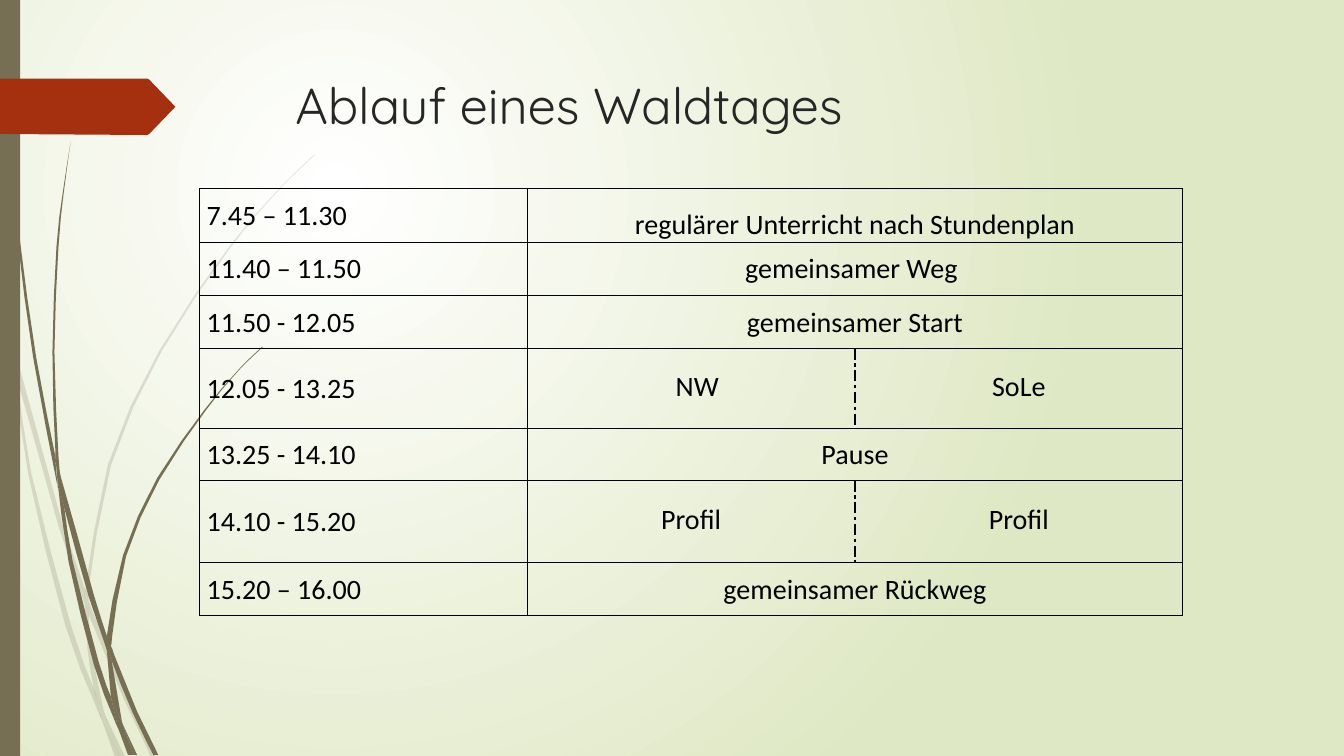
"""Build the slide with the timetable of a forest day."""
from lxml import etree
from pptx import Presentation
from pptx import util as u
from pptx.dml import color
from pptx.enum import shapes, text
from pptx.oxml import ns

PX = 9144
HUES = {"bark": "766F54", "rust": "A53010", "ink": "262626",
        "black": "000000", "white": "FFFFFF", "moss": "DFE8C4"}
MID, LOW = text.MSO_ANCHOR.MIDDLE, text.MSO_ANCHOR.BOTTOM
LEFT, MIDST = text.PP_ALIGN.LEFT, text.PP_ALIGN.CENTER

PALE = [
    ([(11, 350), (9, 322), (0, 282)], [(0, 299), (10, 344), (11, 350)]),
    ([(14, 345), (17, 376), (58, 522), (84, 599)], [(85, 586), (62, 520), (14, 345)]),
    ([(88, 596), (88, 610), (123, 694), (150, 751)], [(155, 751), (127, 692), (92, 607), (88, 596)]),
    ([(119, 751), (124, 751)], [(105, 711), (119, 751)]),
    ([(93, 683), (70, 619), (31, 469), (17, 376), (11, 350)],
     [(11, 350), (28, 470), (65, 621), (92, 693), (101, 714), (99, 707), (93, 683)]),
    ([(84, 599), (87, 646), (93, 683), (96, 692), (105, 711)],
     [(103, 706), (91, 646), (88, 610), (88, 608), (84, 599)]),
    ([(88, 584), (110, 462), (160, 349), (229, 245), (268, 198), (290, 175), (312, 154)],
     [(312, 153), (289, 175), (268, 197), (228, 244), (158, 348), (107, 461), (85, 584),
      (85, 586), (88, 596)]),
    ([(101, 714), (114, 751)], [(119, 751), (101, 714)]),
    ([(88, 608), (88, 610), (88, 596)], [(85, 586), (84, 599), (88, 608)]),
    ([(96, 692), (93, 683), (99, 707), (101, 714), (119, 751)], [(119, 751), (105, 711), (96, 692)]),
]
DARK = [
    ([(7, 110), (17, 233), (33, 355), (56, 477), (57, 481)],
     [(55, 457), (55, 453), (36, 355), (19, 232), (8, 109), (5, 48), (4, 0), (3, 0), (4, 48), (7, 110)]),
    ([(88, 592), (106, 645)], [(106, 633), (106, 631), (93, 590), (60, 472), (64, 505), (88, 592)]),
    ([(113, 649), (110, 641), (111, 656), (132, 708), (152, 749)], [(157, 749), (136, 706), (113, 649)]),
    ([(110, 691), (98, 657), (72, 556), (64, 505), (57, 477)],
     [(57, 477), (68, 557), (93, 659), (111, 708), (117, 722), (116, 717), (110, 691)]),
    ([(60, 472), (58, 453), (54, 349), (58, 245), (63, 193), (70, 141)],
     [(70, 141), (62, 193), (56, 245), (52, 349), (55, 449), (60, 472)]),
    ([(133, 749), (136, 749)], [(122, 719), (133, 749)]),
    ([(57, 477), (64, 505)], [(60, 472), (55, 449), (55, 453), (57, 477)]),
    ([(111, 633), (125, 552), (158, 476), (205, 406), (231, 374), (245, 359), (261, 344)],
     [(260, 344), (245, 358), (231, 373), (204, 405), (156, 474), (122, 551), (106, 631),
      (110, 641), (111, 633)]),
    ([(117, 722), (127, 749)], [(131, 749), (117, 722)]),
    ([(106, 645), (110, 691), (116, 706), (122, 719)],
     [(121, 716), (111, 656), (109, 651), (106, 645)]),
    ([(106, 645), (109, 651), (111, 656)], [(110, 641), (106, 631), (106, 633), (106, 645)]),
    ([(116, 706), (110, 691), (116, 717), (117, 722), (130, 749)], [(133, 749), (122, 719), (116, 706)]),
]
SIGN = [(0, 78), (146, 78), (148, 79), (174, 106), (148, 133), (146, 134), (0, 133)]
PLAN = [
    (53, "7.45 – 11.30", ["regulärer Unterricht nach Stundenplan"]),
    (53, "11.40 – 11.50", ["gemeinsamer Weg"]),
    (53, "11.50 - 12.05", ["gemeinsamer Start"]),
    (79, "12.05 - 13.25", ["NW", "SoLe"]),
    (52, "13.25 - 14.10", ["Pause"]),
    (81, "14.10 - 15.20", ["Profil", "Profil"]),
    (53, "15.20 – 16.00", ["gemeinsamer Rückweg"]),
]


def hue(name):
    """Return the named colour."""
    return color.RGBColor.from_string(HUES[name])


def tag(parent, name, **attrs):
    """Append a drawing element to its parent."""
    return etree.SubElement(parent, ns.qn(name), attrs)


def write(frame, words, size=20, font="Calibri", ink="black", align=LEFT):
    """Put formatted words into a text frame."""
    para = frame.paragraphs[0]
    para.alignment = align
    run = para.add_run()
    run.text = words
    run.font.size = u.Pt(size)
    run.font.name = font
    run.font.color.rgb = hue(ink)


def paint(shape, fill, alpha=100):
    """Give a shape a plain fill without line or shadow."""
    shape.shadow.inherit = False
    shape.line.fill.background()
    shape.fill.solid()
    shape.fill.fore_color.rgb = hue(fill)
    if alpha < 100:
        tint = shape.element.spPr.find(".//" + ns.qn("a:srgbClr"))
        tag(tint, "a:alpha", val=str(alpha * 1000))


def smooth(edge):
    """Add a point on a soft curve halfway along each part of a long edge."""
    if len(edge) < 5:
        return edge
    pts = [edge[0], *edge, edge[-1]]
    curve = [edge[0]]
    for a, b, c, d in zip(pts, pts[1:], pts[2:], pts[3:]):
        half = tuple((9 * (q + r) - p - s) / 16 for p, q, r, s in zip(a, b, c, d))
        curve += [half, c]
    return curve


def outline(slide, points, fill, alpha=100):
    """Draw a closed filled outline."""
    spots = [(round(x * PX), round(y * PX)) for x, y in points]
    pen = slide.shapes.build_freeform(*spots[0], scale=1.0)
    pen.add_line_segments(spots[1:], close=True)
    paint(pen.convert_to_shape(), fill, alpha)


def backdrop(slide):
    """Fill the background with a round gradient."""
    fill = slide.background.fill
    fill.gradient()
    for stop, name in zip(fill.gradient_stops, ("white", "moss")):
        stop.color.rgb = hue(name)
    line = slide.element.find(".//" + ns.qn("a:lin"))
    ring = etree.Element(ns.qn("a:path"), {"path": "circle"})
    tag(ring, "a:fillToRect", l="50000", t="50000", r="100000", b="100000")
    line.getparent().replace(line, ring)


def border(cell, dashed=""):
    """Draw the four cell borders, with one side dashed on demand."""
    props = cell._tc.get_or_add_tcPr()
    for spot, side in enumerate("LRTB"):
        dash = side == dashed
        line = etree.Element(ns.qn("a:ln" + side), {"w": str(u.Pt(1 if dash else 0.5))})
        tag(tag(line, "a:solidFill"), "a:srgbClr", val=HUES["black"])
        tag(line, "a:prstDash", val="dashDot" if dash else "solid")
        props.insert(spot, line)


def fit(cell, words, left=1, right=1, below=0, anchor=MID, align=MIDST):
    """Write a table cell with narrow margins."""
    cell.margin_left, cell.margin_right = left * PX, right * PX
    cell.margin_top, cell.margin_bottom = PX, below * PX
    cell.vertical_anchor = anchor
    write(cell.text_frame, words, align=align)


def table(slide, x, y, wide):
    """Lay out the timetable."""
    high = sum(row[0] for row in PLAN)
    frame = slide.shapes.add_table(len(PLAN), 3, x * PX, y * PX, 3 * wide * PX, high * PX)
    grid = frame.table
    grid.first_row = grid.horz_banding = False
    for col in grid.columns:
        col.width = wide * PX
    for i, (tall, time, parts) in enumerate(PLAN):
        grid.rows[i].height = tall * PX
        split = len(parts) == 2
        for j, dashed in enumerate(("", "R", "L")):
            cell = grid.cell(i, j)
            cell.fill.background()
            border(cell, dashed if split else "")
        if not split:
            grid.cell(i, 1).merge(grid.cell(i, 2))
        fit(grid.cell(i, 0), time, left=7, align=LEFT)
        for j, part in enumerate(parts, 1):
            fit(grid.cell(i, j), part, left=13 if part == "NW" else 1,
                right=8 if part.endswith("Weg") else 1,
                below=4 if split else 0, anchor=MID if i else LOW)


def title(slide, words, x, y, w, h):
    """Add the heading."""
    frame = slide.shapes.add_textbox(x * PX, y * PX, w * PX, h * PX).text_frame
    frame.word_wrap = True
    write(frame, words, size=36, font="Quicksand", ink="ink")


def main():
    """Build and save the slide."""
    deck = Presentation()
    deck.slide_width, deck.slide_height = 1333 * PX, 750 * PX
    slide = deck.slides.add_slide(deck.slide_layouts[6])
    backdrop(slide)
    for blades, alpha in ((PALE, 20), (DARK, 100)):
        for near, far in blades:
            outline(slide, smooth(near) + smooth(far), "bark", alpha)
    bar = slide.shapes.add_shape(shapes.MSO_SHAPE.RECTANGLE, 0, 0, 20 * PX, 750 * PX)
    paint(bar, "bark")
    outline(slide, SIGN, "rust")
    title(slide, "Ablauf eines Waldtages", 283, 69, 975, 140)
    table(slide, 198, 187, 325)
    deck.save("out.pptx")


if __name__ == "__main__":
    main()
